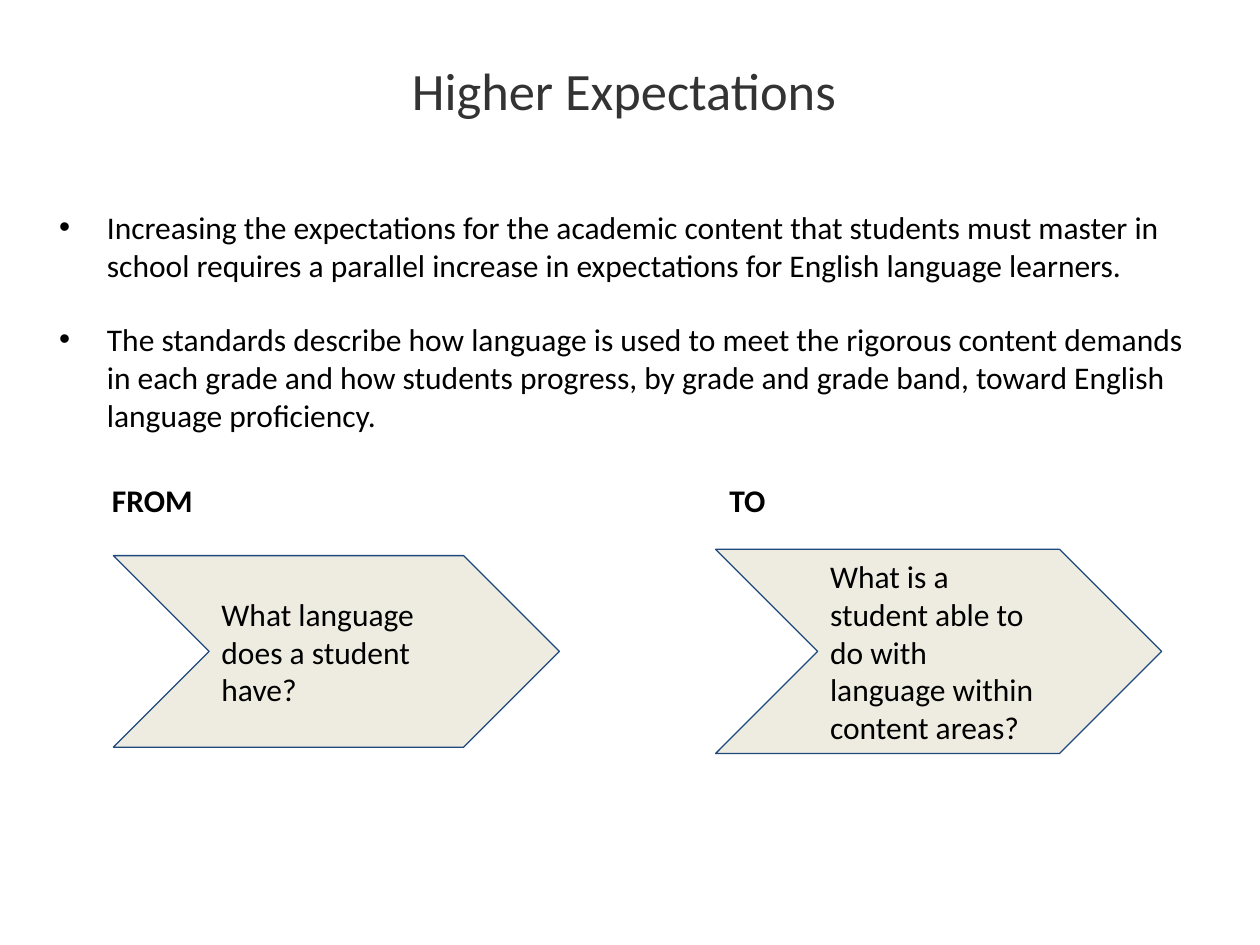
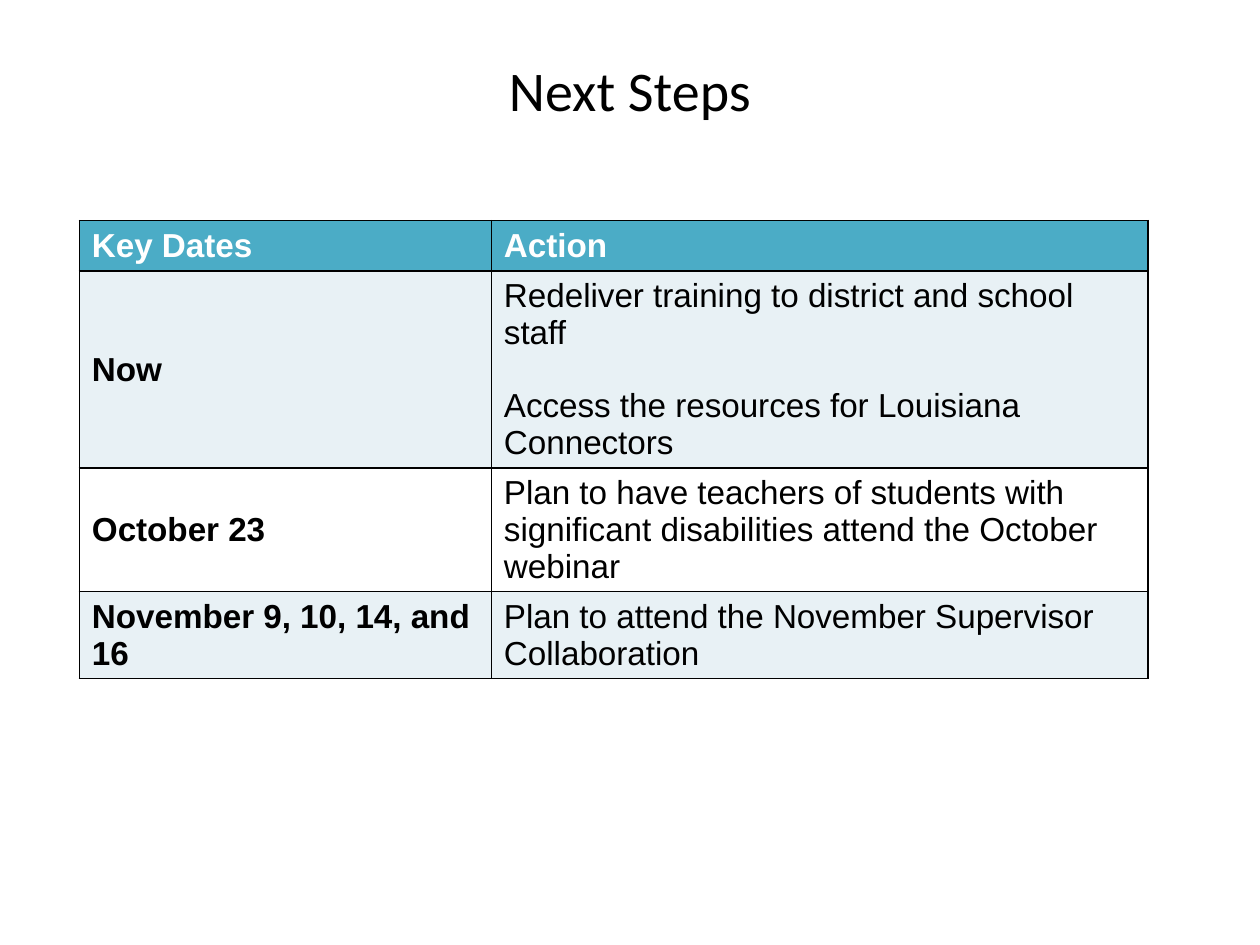
"""Build two slides: higher expectations for learners and a table of next steps."""
from lxml import etree
from pptx import Presentation
from pptx.dml.color import RGBColor
from pptx.enum.shapes import MSO_SHAPE
from pptx.enum.text import MSO_ANCHOR, PP_ALIGN
from pptx.oxml.ns import qn
from pptx.util import Inches, Pt

CHEVRON = MSO_SHAPE.CHEVRON
MIDDLE, BOTTOM = MSO_ANCHOR.MIDDLE, MSO_ANCHOR.BOTTOM
LEFT, CENTER = PP_ALIGN.LEFT, PP_ALIGN.CENTER

COLORS = {
    "black": "000000",
    "white": "FFFFFF",
    "charcoal": "333333",
    "sand": "EEECE1",
    "navy": "1F497D",
    "teal": "4BACC6",
    "pale": "E8F1F5",
}

EXPECTATIONS = [
    "Increasing the expectations for the academic content that students must master in "
    "school requires a parallel increase in expectations for English language learners.",
    "The standards describe how language is used to meet the rigorous content demands "
    "in each grade and how students progress, by grade and grade band, toward English "
    "language proficiency.",
]
SHIFTS = [
    {"label": "FROM", "label_left": 0.79, "left": 0.9, "height": 1.52,
     "question": "What language does a student have?"},
    {"label": "TO", "label_left": 5.69, "left": 5.68, "height": 1.62,
     "question": "What is a student able to do with language within content areas?"},
]
SHIFT_MIDDLE, CHEVRON_WIDTH, LABEL_TOP = 5.17, 3.54, 3.77

STEPS = [
    ("Key Dates", ["Action"]),
    ("Now", ["Redeliver training to district and school staff",
             "Access the resources for Louisiana Connectors"]),
    ("October 23", ["Plan to have teachers of students with significant disabilities "
                    "attend the October webinar"]),
    ("November 9, 10, 14, and 16", ["Plan to attend the November Supervisor Collaboration"]),
]
COLUMN_WIDTHS = [3.27, 5.21]
ROW_HEIGHTS = [0.4, 1.56, 0.98, 0.69]
BORDERS = [
    {"lnL": 1, "lnR": 0.75, "lnT": 1, "lnB": 1},
    {"lnL": 0.75, "lnR": 1, "lnT": 1, "lnB": 1},
]


def color(name):
    return RGBColor.from_string(COLORS[name])


def write(frame, lines, size, font="Calibri", ink="black", bold=False, align=LEFT):
    frame.text = "\n".join(lines)
    for index, para in enumerate(frame.paragraphs):
        para.alignment = align
        if index:
            para.space_before = Pt(21)
        for span in para.runs:
            span.font.name = font
            span.font.size = Pt(size)
            span.font.bold = bold
            span.font.color.rgb = color(ink)


def add_page(deck, title, size, ink):
    page = deck.slides.add_slide(deck.slide_layouts[5])
    box = page.shapes.title
    box.left, box.top, box.width, box.height = 0, 0, deck.slide_width, Inches(1.42)
    box.text_frame.vertical_anchor = MIDDLE
    write(box.text_frame, [title], size, ink=ink, align=CENTER)
    return page


def add_text(page, left, top, width, height, lines, bold=False):
    box = page.shapes.add_textbox(Inches(left), Inches(top), Inches(width), Inches(height))
    box.text_frame.word_wrap = True
    write(box.text_frame, lines, 18, bold=bold)
    return box


def add_bullet(para):
    properties = para._p.get_or_add_pPr()
    properties.set("marL", str(Inches(0.5)))
    properties.set("indent", str(Inches(-0.38)))
    etree.SubElement(properties, qn("a:buFont"), typeface="Arial")
    etree.SubElement(properties, qn("a:buChar"), char="•")


def add_chevron(page, shift):
    top = SHIFT_MIDDLE - shift["height"] / 2
    chevron = page.shapes.add_shape(
        CHEVRON, Inches(shift["left"]), Inches(top),
        Inches(CHEVRON_WIDTH), Inches(shift["height"]))
    chevron.shadow.inherit = False
    chevron.fill.solid()
    chevron.fill.fore_color.rgb = color("sand")
    chevron.line.color.rgb = color("navy")
    chevron.line.width = Pt(0.75)
    frame = chevron.text_frame
    frame.word_wrap = True
    frame.vertical_anchor = MIDDLE
    frame.margin_top = frame.margin_bottom = Inches(0.1)
    write(frame, [shift["question"]], 18)


def add_borders(cell, widths):
    properties = cell._tc.get_or_add_tcPr()
    for side, width in widths.items():
        line = etree.SubElement(properties, qn(f"a:{side}"), w=str(Pt(width)))
        fill = etree.SubElement(line, qn("a:solidFill"))
        etree.SubElement(fill, qn("a:srgbClr"), val=COLORS["black"])


def add_steps_table(page):
    table = page.shapes.add_table(
        len(STEPS), len(COLUMN_WIDTHS), Inches(0.63), Inches(1.75),
        Inches(sum(COLUMN_WIDTHS)), Inches(sum(ROW_HEIGHTS))).table
    for column, width in zip(table.columns, COLUMN_WIDTHS):
        column.width = Inches(width)
    for row, height in zip(table.rows, ROW_HEIGHTS):
        row.height = Inches(height)
    for row_index, (date, actions) in enumerate(STEPS):
        header = row_index == 0
        fill = "teal" if header else "pale" if row_index % 2 else "white"
        for column_index, lines in enumerate([[date], actions]):
            cell = table.cell(row_index, column_index)
            add_borders(cell, BORDERS[column_index])
            cell.fill.solid()
            cell.fill.fore_color.rgb = color(fill)
            cell.vertical_anchor = BOTTOM if header else MIDDLE
            write(cell.text_frame, lines, 19, "Arial", "white" if header else "black",
                  bold=header or column_index == 0)


def main():
    deck = Presentation()
    deck.slide_width, deck.slide_height = Inches(10), Inches(7.5)

    page = add_page(deck, "Higher Expectations ", 30, "charcoal")
    body = add_text(page, 0.25, 1.6, 9.45, 2, EXPECTATIONS)
    for para in body.text_frame.paragraphs:
        add_bullet(para)
    for shift in SHIFTS:
        add_text(page, shift["label_left"], LABEL_TOP, 1.5, 0.4, [shift["label"]], bold=True)
        add_chevron(page, shift)

    page = add_page(deck, "Next Steps", 32, "black")
    add_steps_table(page)
    deck.save("out.pptx")


if __name__ == "__main__":
    main()
